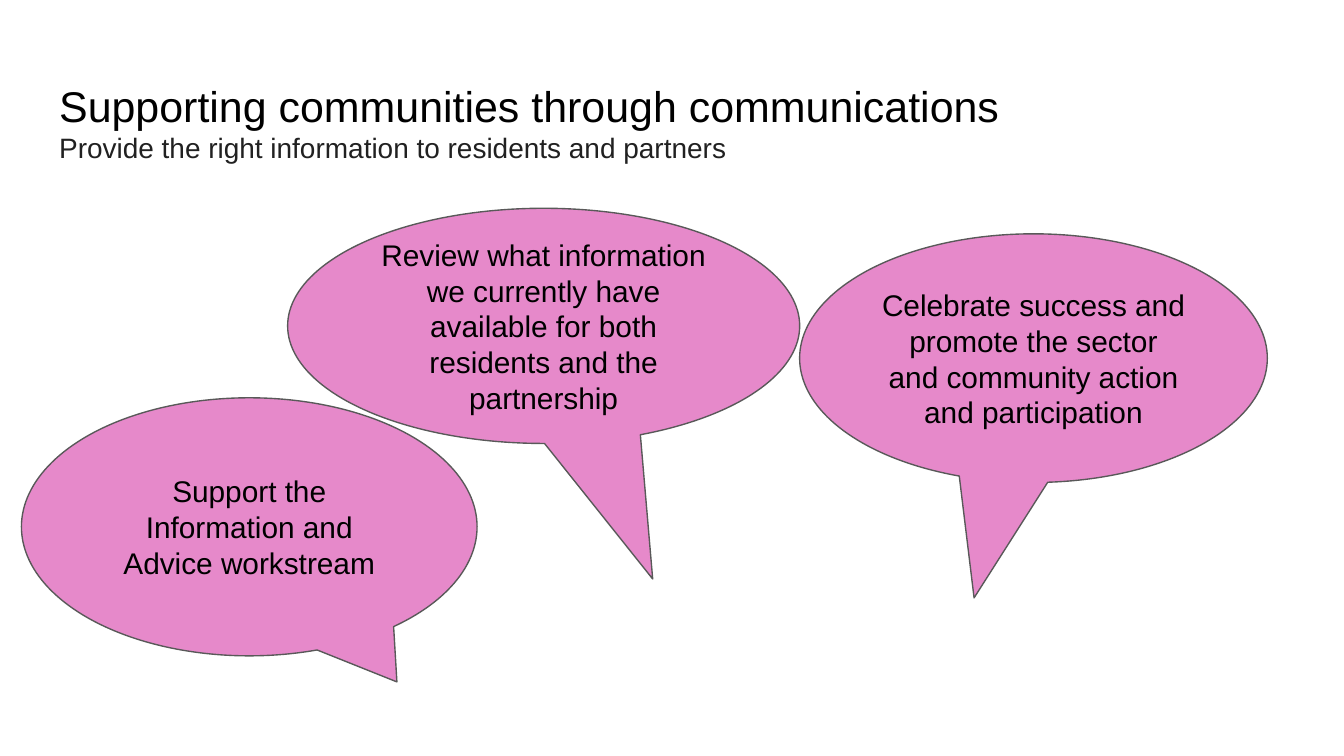
import pptx
import pptx.util
import pptx.dml.color
import pptx.enum.shapes
import pptx.enum.text
from pptx.util import Inches

COLORS = {
    "bubble": "E689CA",
    "outline": "595959",
    "text": "000000",
    "subtitle": "212121",
}


def rgb(name):
    return pptx.dml.color.RGBColor.from_string(COLORS[name])


def add_text(paragraph, text, size, color, alignment):
    paragraph.alignment = alignment
    run = paragraph.add_run()
    run.text = text
    run.font.name = "Arial"
    run.font.size = pptx.util.Pt(size)
    run.font.color.rgb = rgb(color)


# Widescreen slide, 16:9
presentation = pptx.Presentation()
presentation.slide_width = Inches(10)
presentation.slide_height = Inches(10 * 9 / 16)
slide = presentation.slides.add_slide(presentation.slide_layouts[5])

# Heading and its subtitle
heading = slide.shapes.title
heading.left, heading.top = Inches(0.34), Inches(0.49)
heading.width, heading.height = Inches(9.32), Inches(0.63)
heading_frame = heading.text_frame
heading_frame.vertical_anchor = pptx.enum.text.MSO_ANCHOR.TOP
left = pptx.enum.text.PP_ALIGN.LEFT
add_text(heading_frame.paragraphs[0],
         "Supporting communities through communications", 23, "text", left)
add_text(heading_frame.add_paragraph(),
         "Provide the right information to residents and partners", 15, "subtitle", left)

# Speech bubbles: left, top, width, height, tail offset, message
bubbles = [
    (0.16, 2.96, 3.39, 1.92, (0.324, 0.601),
     "Support the Information and Advice workstream"),
    (2.14, 1.55, 3.81, 1.75, (0.213, 1.076),
     "Review what information we currently have available for both "
     "residents and the partnership"),
    (5.95, 1.74, 3.48, 1.85, (-0.127, 0.964),
     "Celebrate success and promote the sector and community action "
     "and participation"),
]
for x, y, width, height, tail, message in bubbles:
    bubble = slide.shapes.add_shape(
        pptx.enum.shapes.MSO_SHAPE.OVAL_CALLOUT,
        Inches(x), Inches(y), Inches(width), Inches(height))
    bubble.adjustments[0], bubble.adjustments[1] = tail
    bubble.shadow.inherit = False
    bubble.fill.solid()
    bubble.fill.fore_color.rgb = rgb("bubble")
    bubble.line.color.rgb = rgb("outline")
    bubble.line.width = pptx.util.Pt(0.75)
    bubble.text_frame.vertical_anchor = pptx.enum.text.MSO_ANCHOR.MIDDLE
    add_text(bubble.text_frame.paragraphs[0], message, 16, "text",
             pptx.enum.text.PP_ALIGN.CENTER)

# Shared text margins
for shape in slide.shapes:
    frame = shape.text_frame
    frame.word_wrap = True
    frame.auto_size = pptx.enum.text.MSO_AUTO_SIZE.NONE
    frame.margin_left = frame.margin_right = Inches(0.1)
    frame.margin_top = frame.margin_bottom = Inches(0.1)

presentation.save("out.pptx")
